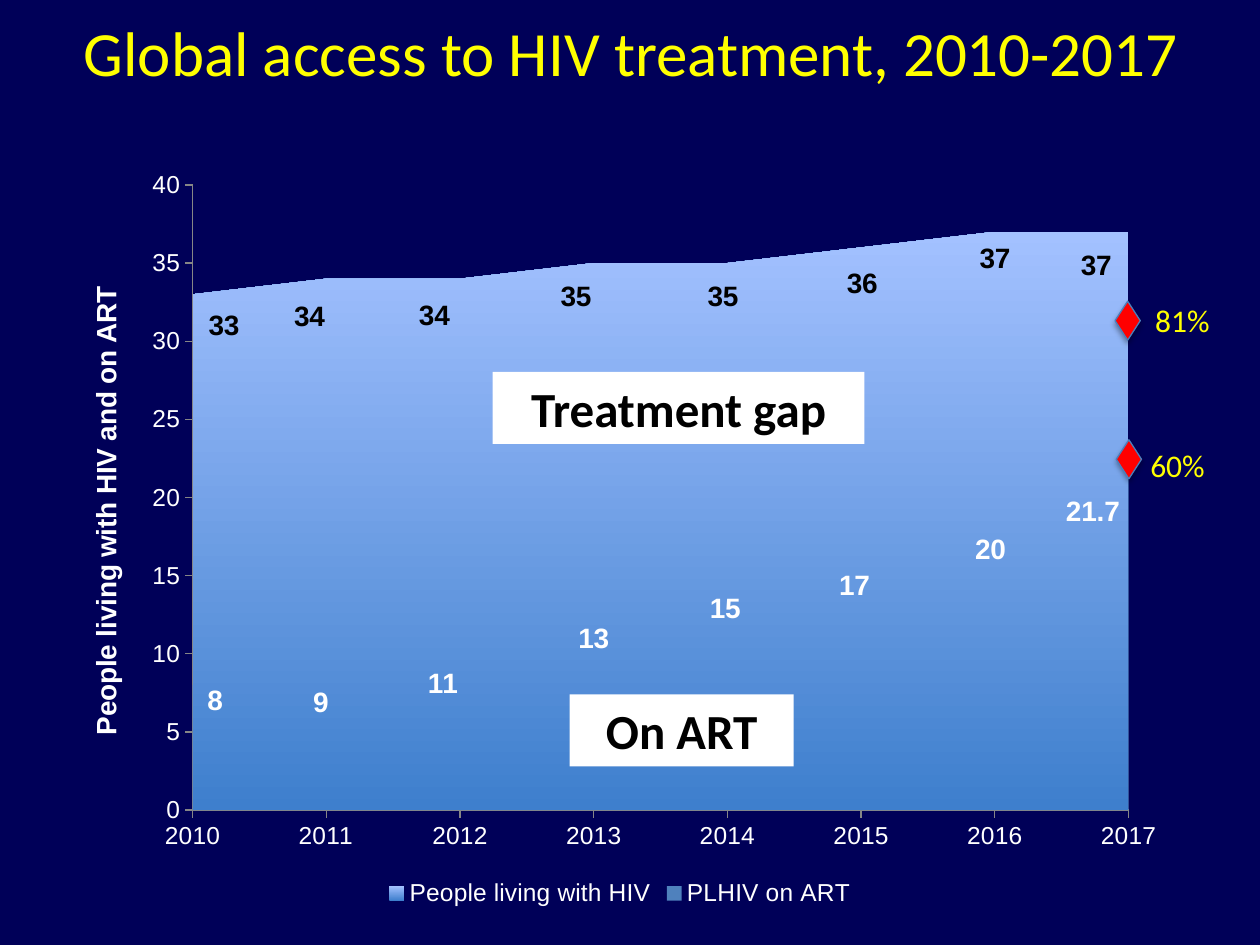
from dataclasses import dataclass

from lxml.etree import SubElement
from pptx import Presentation
from pptx.chart.data import CategoryChartData
from pptx.dml.color import RGBColor
from pptx.enum.chart import XL_CHART_TYPE as ChartType
from pptx.enum.chart import XL_LEGEND_POSITION as LegendPos
from pptx.enum.chart import XL_TICK_MARK as Tick
from pptx.enum.shapes import MSO_SHAPE as Shape
from pptx.enum.text import MSO_ANCHOR as Anchor
from pptx.enum.text import PP_ALIGN as Align
from pptx.oxml import parse_xml
from pptx.oxml.ns import nsdecls, qn
from pptx.util import Pt

NAVY = RGBColor(0x00, 0x00, 0x58)
YELLOW = RGBColor(0xFF, 0xFF, 0x00)
WHITE = RGBColor(0xFF, 0xFF, 0xFF)
BLACK = RGBColor(0x00, 0x00, 0x00)
RED = RGBColor(0xFF, 0x00, 0x00)
BLUE = RGBColor(0x4F, 0x81, 0xBD)
OUTLINE = RGBColor(0x4B, 0x7E, 0xBC)
AXIS = RGBColor(0x86, 0x86, 0x86)
AREA_BOTTOM = RGBColor(0x3E, 0x7F, 0xCD)
AREA_TOP = RGBColor(0xA3, 0xC1, 0xFF)

AXIS_MAX = 40
PLOT_HEIGHT = 82.7
NO_LEADERS = (
    f'<c:extLst {nsdecls("c")}><c:ext uri="{{CE6537A1-D6FC-4f65-9D91-7224C49458BB}}" '
    'xmlns:c15="http://schemas.microsoft.com/office/drawing/2012/chart">'
    '<c15:showLeaderLines val="0"/></c:ext></c:extLst>'
)


@dataclass
class AreaSeries:
    name: str
    values: list[float]
    label_color: RGBColor
    label_shifts: list[tuple[float, float]]


@dataclass
class Caption:
    text: str
    left: float
    top: float
    width: float


@dataclass
class Target:
    text: str
    left: float
    top: float
    text_left: float
    text_top: float


YEARS = [str(year) for year in range(2010, 2018)]
SERIES = [
    AreaSeries("People living with HIV", [33, 34, 34, 35, 35, 36, 37, 37], BLACK,
               [(2.8, 4.1), (-1.5, 5), (-2.3, 4.9), (-1.6, 4.5),
                (-0.4, 4.5), (0.1, 4.8), (0, 3.6), (-2.9, 4.5)]),
    AreaSeries("PLHIV on ART", [8, 9, 11, 13, 15, 17, 20, 21.7], WHITE,
               [(2, 2.1), (-0.5, 4.4), (-1.5, 6), (0, 4.2),
                (-0.2, 4.4), (-0.6, 5.4), (-0.4, 6.9), (-3.2, 5.4)]),
]
CAPTIONS = [
    Caption("On ART", 325.5, 396.8, 128),
    Caption("Treatment gap", 281.5, 212.5, 212.5),
]
TARGETS = [
    Target("81%", 637.2, 172.1, 653, 168.5),
    Target("60%", 637.9, 251.3, 650.2, 251.3),
]


def style_font(font, size: float, color: RGBColor, name: str, bold: bool = False) -> None:
    font.size = Pt(size)
    font.color.rgb = color
    font.name = name
    font.bold = bold


def layout_xml(x: float, y: float, size: tuple[float, float] | None = None,
               edge: bool = True):
    parts = []
    if size:
        parts.append('<c:layoutTarget val="inner"/>')
    if edge:
        parts.append('<c:xMode val="edge"/><c:yMode val="edge"/>')
    parts.append(f'<c:x val="{x / 100:.4f}"/><c:y val="{y / 100:.4f}"/>')
    if size:
        parts.append(f'<c:w val="{size[0] / 100:.4f}"/><c:h val="{size[1] / 100:.4f}"/>')
    return parse_xml(f'<c:layout {nsdecls("c")}><c:manualLayout>'
                     f'{"".join(parts)}</c:manualLayout></c:layout>')


def replace_layout(parent, layout, index: int) -> None:
    for old in parent.findall(qn("c:layout")):
        parent.remove(old)
    parent.insert(index, layout)


def label_series(plot_series, series: AreaSeries) -> None:
    labels = plot_series.data_labels
    labels.show_value = True
    style_font(labels.font, 16, series.label_color, "Arial", True)
    for i in range(len(series.values)):
        font = plot_series.points[i].data_label.font
        style_font(font, 16, series.label_color, "Arial", True)
    group = plot_series._element.find(qn("c:dLbls"))
    for leaders in group.findall(qn("c:showLeaderLines")):
        leaders.set("val", "0")
    group.append(parse_xml(NO_LEADERS))
    for element, value, (dx, dy) in zip(group.findall(qn("c:dLbl")), series.values,
                                        series.label_shifts):
        half_area = value / AXIS_MAX * PLOT_HEIGHT / 2
        replace_layout(element, layout_xml(dx, dy - half_area, edge=False), 1)


def style_axis(axis) -> None:
    axis.has_major_gridlines = False
    axis.major_tick_mark = Tick.OUTSIDE
    axis.minor_tick_mark = Tick.NONE
    axis.format.line.color.rgb = AXIS
    style_font(axis.tick_labels.font, 14, WHITE, "Arial")


def add_area_chart(s) -> None:
    data = CategoryChartData()
    data.categories = YEARS
    for series in SERIES:
        data.add_series(series.name, series.values)
    chart = s.shapes.add_chart(ChartType.AREA, Pt(34.6), Pt(89.3), Pt(639.4), Pt(432),
                               data).chart
    style_font(chart.font, 12, WHITE, "Arial")
    chart.has_title = False
    chart.has_legend = True
    chart.legend.position = LegendPos.BOTTOM
    chart.legend.include_in_layout = False
    style_font(chart.legend.font, 14, WHITE, "Arial")

    style_axis(chart.category_axis)
    value_axis = chart.value_axis
    style_axis(value_axis)
    value_axis.minimum_scale, value_axis.maximum_scale = 0, AXIS_MAX
    value_axis.major_unit = 5
    title = value_axis.axis_title
    p = title.text_frame.paragraphs[0]
    p.text = "People living with HIV and on ART"
    style_font(p.font, 16, WHITE, "Arial", True)
    body = title._element.find(".//" + qn("a:bodyPr"))
    body.set("rot", "-5400000")
    body.set("vert", "horz")
    replace_layout(title._element, layout_xml(2, 16.55), 1)
    for crossing in chart._chartSpace.iter(qn("c:crossBetween")):
        crossing.set("val", "midCat")
    replace_layout(chart._chartSpace.chart.plotArea,
                   layout_xml(11.8, 3.8, (83.65, PLOT_HEIGHT)), 0)

    living, treated = chart.plots[0].series
    fill = living.format.fill
    fill.gradient()
    fill.gradient_angle = 90
    for stop, color in zip(fill.gradient_stops, (AREA_BOTTOM, AREA_TOP)):
        stop.color.rgb = color
    treated.format.fill.solid()
    treated.format.fill.fore_color.rgb = BLUE
    for plot_series, series in zip((living, treated), SERIES):
        label_series(plot_series, series)


def add_title(s) -> None:
    title = s.shapes.title
    title.left, title.top, title.width, title.height = Pt(0), Pt(4.3), Pt(721.4), Pt(51)
    title.text_frame.vertical_anchor = Anchor.TOP
    p = title.text_frame.paragraphs[0]
    p.text = "Global access to HIV treatment, 2010-2017"
    p.alignment = Align.CENTER
    style_font(p.font, 36, YELLOW, "Calibri")


def add_caption(s, caption: Caption) -> None:
    sp = s.shapes.add_shape(Shape.RECTANGLE, Pt(caption.left), Pt(caption.top),
                            Pt(caption.width), Pt(41.2))
    sp.shadow.inherit = False
    sp.fill.solid()
    sp.fill.fore_color.rgb = WHITE
    sp.line.fill.background()
    tf = sp.text_frame
    tf.vertical_anchor = Anchor.TOP
    p = tf.paragraphs[0]
    p.text = caption.text
    p.alignment = Align.CENTER
    style_font(p.font, 28, BLACK, "Calibri", True)


def add_target(s, target: Target) -> None:
    sp = s.shapes.add_shape(Shape.DIAMOND, Pt(target.left), Pt(target.top),
                            Pt(14.4), Pt(22.3))
    sp.fill.solid()
    sp.fill.fore_color.rgb = RED
    sp.line.color.rgb = OUTLINE
    sp.line.width = Pt(0.75)
    sp.shadow.inherit = False
    effects = sp._element.spPr.find(qn("a:effectLst"))
    shadow = SubElement(effects, qn("a:outerShdw"), blurRad=str(Pt(3.1)),
                        dist=str(Pt(1.8)), dir="5400000", rotWithShape="0")
    color = SubElement(shadow, qn("a:srgbClr"), val=str(BLACK))
    SubElement(color, qn("a:alpha"), val="35000")

    box = s.shapes.add_textbox(Pt(target.text_left), Pt(target.text_top), Pt(46), Pt(29))
    box.text_frame.word_wrap = False
    p = box.text_frame.paragraphs[0]
    p.text = target.text
    style_font(p.font, 18, YELLOW, "Calibri")


def main() -> None:
    prs = Presentation()
    prs.slide_width, prs.slide_height = Pt(720), Pt(540)
    s = prs.slides.add_slide(prs.slide_layouts[5])
    s.background.fill.solid()
    s.background.fill.fore_color.rgb = NAVY
    add_area_chart(s)
    add_title(s)
    for caption in CAPTIONS:
        add_caption(s, caption)
    for target in TARGETS:
        add_target(s, target)
    prs.save("out.pptx")


if __name__ == "__main__":
    main()
